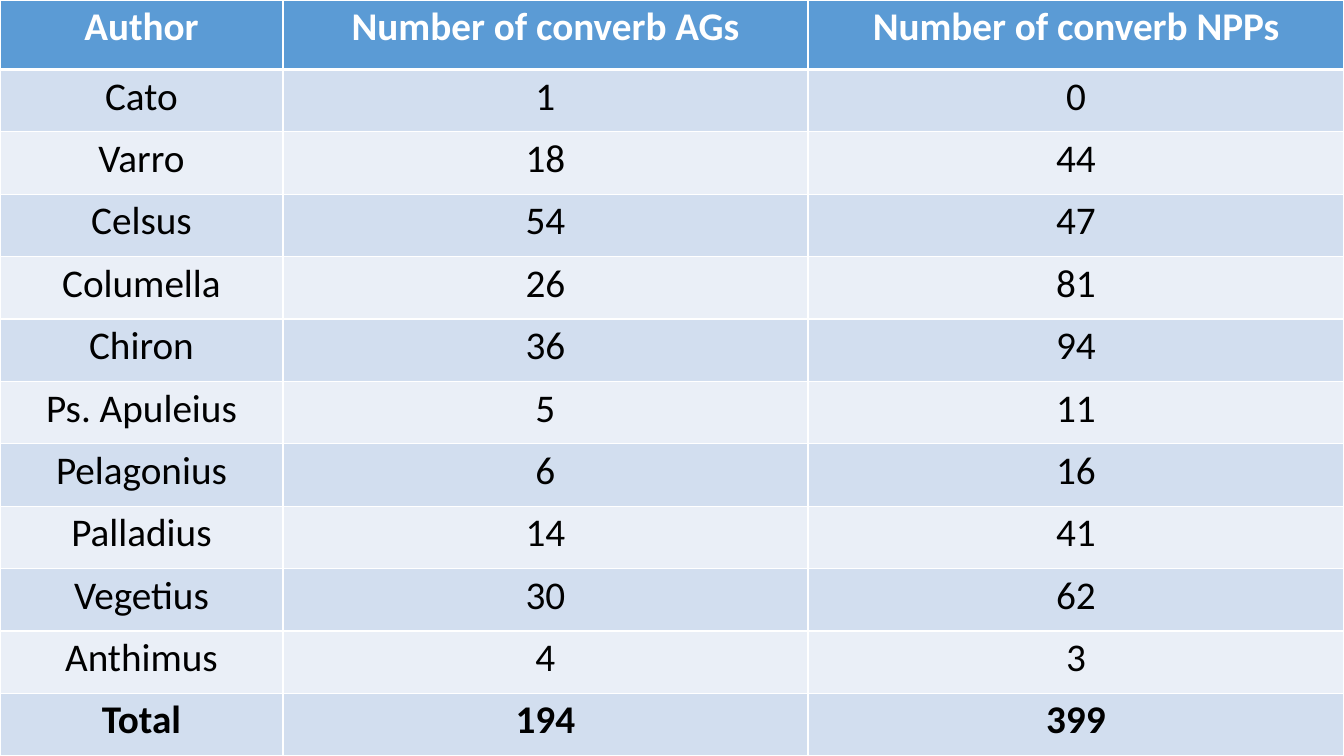
import pptx
import pptx.dml.color
import pptx.enum.text
import pptx.oxml
import pptx.oxml.ns
import pptx.util
from pptx.util import Cm

RGBColor = pptx.dml.color.RGBColor
WHITE = RGBColor(0xFF, 0xFF, 0xFF)
BLACK = RGBColor(0, 0, 0)
BACKGROUND = RGBColor(0xAD, 0xB9, 0xCA)
HEADER = RGBColor(0x5B, 0x9B, 0xD5)
BANDS = [RGBColor(0xEA, 0xEF, 0xF7), RGBColor(0xD2, 0xDE, 0xEF)]

ROWS = [
    ("Author", "Number of converb AGs", "Number of converb NPPs"),
    ("Cato", 1, 0),
    ("Varro", 18, 44),
    ("Celsus", 54, 47),
    ("Columella", 26, 81),
    ("Chiron", 36, 94),
    ("Ps. Apuleius", 5, 11),
    ("Pelagonius", 6, 16),
    ("Palladius", 14, 41),
    ("Vegetius", 30, 62),
    ("Anthimus", 4, 3),
    ("Total", 194, 399),
]


def add_border(cell, side, width):
    cell._tc.get_or_add_tcPr().append(pptx.oxml.parse_xml(
        f'<a:ln{side} {pptx.oxml.ns.nsdecls("a")} w="{pptx.util.Pt(width)}">'
        f'<a:solidFill><a:srgbClr val="{WHITE}"/></a:solidFill></a:ln{side}>'))


def format_cell(cell, value, row):
    for side in "LRTB":
        under_header = (row, side) in [(0, "B"), (1, "T")]
        add_border(cell, side, 3 if under_header else 1)
    cell.fill.solid()
    cell.fill.fore_color.rgb = BANDS[row % 2] if row else HEADER
    cell.margin_left = cell.margin_right = Cm(0.19)
    cell.margin_top = cell.margin_bottom = 0
    cell.text_frame.text = str(value)
    p = cell.text_frame.paragraphs[0]
    p.alignment = pptx.enum.text.PP_ALIGN.CENTER
    p.line_spacing = 1.07
    font = p.runs[0].font
    font.name = "Calibri"
    font.size = pptx.util.Pt(28)
    font.bold = row in (0, len(ROWS) - 1)
    font.color.rgb = BLACK if row else WHITE


def add_converb_table(s, left, top, width, height):
    table = s.shapes.add_table(len(ROWS), len(ROWS[0]), left, top, width, height).table
    widths = [Cm(7.13), Cm(13.23)]
    for column, w in zip(table.columns, widths + [width - sum(widths)]):
        column.width = w
    header_height = Cm(1.75)
    for r, values in enumerate(ROWS):
        table.rows[r].height = (height - header_height) // (len(ROWS) - 1) if r else header_height
        for c, value in enumerate(values):
            format_cell(table.cell(r, c), value, r)


def main():
    prs = pptx.Presentation()
    prs.slide_width, prs.slide_height = Cm(33.87), Cm(19.05)
    s = prs.slides.add_slide(prs.slide_layouts[6])
    s.background.fill.solid()
    s.background.fill.fore_color.rgb = BACKGROUND
    add_converb_table(s, 0, 0, prs.slide_width, prs.slide_height)
    prs.save("out.pptx")


if __name__ == "__main__":
    main()
